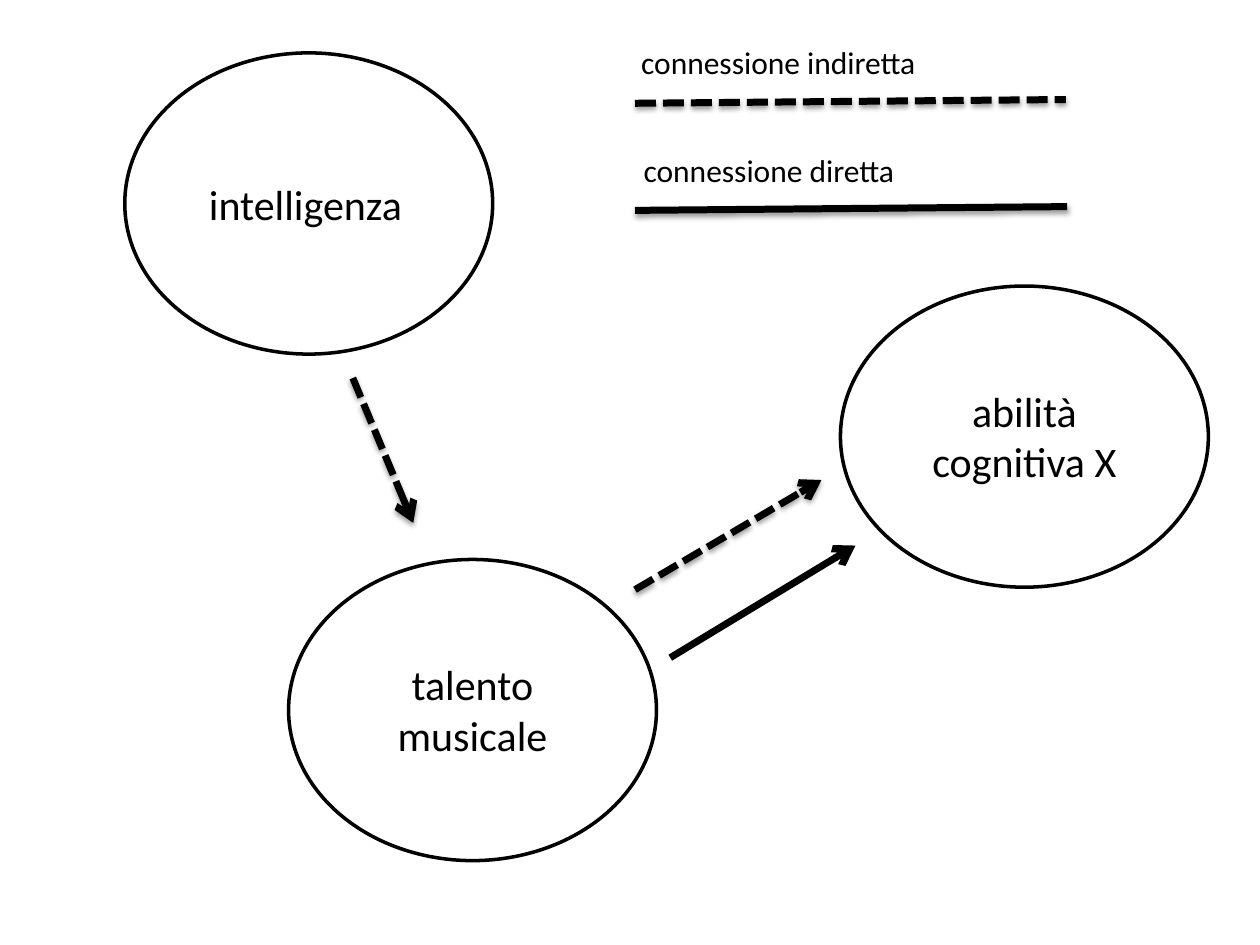
from dataclasses import dataclass
from lxml.etree import SubElement
from pptx import Presentation
from pptx.dml.color import RGBColor
from pptx.enum.dml import MSO_LINE
from pptx.enum.shapes import MSO_CONNECTOR, MSO_SHAPE
from pptx.enum.text import MSO_AUTO_SIZE, PP_ALIGN
from pptx.oxml.ns import qn
from pptx.util import Inches, Pt


@dataclass(frozen=True)
class Theme:
    font: str = "Calibri"
    ink: RGBColor = RGBColor(0, 0, 0)
    paper: RGBColor = RGBColor(255, 255, 255)
    node_size: int = 24
    legend_size: int = 18
    outline: int = 2
    stroke: int = 4


THEME = Theme()
NODE_W, NODE_H = 2.92, 2.39
NODE_TEXT_W = 1.78

NODES = [
    ("intelligenza", 0.99, 0.42, 0.5, PP_ALIGN.LEFT),
    ("talento musicale", 2.29, 4.44, 0.91, PP_ALIGN.CENTER),
    ("abilità cognitiva X", 6.67, 2.27, 0.91, PP_ALIGN.CENTER),
]
LINES = [
    {"ends": (5.32, 5.22, 6.79, 4.33), "arrow": True},
    {"ends": (2.8, 3, 3.28, 4.15), "arrow": True, "dashed": True, "shadow": True},
    {"ends": (5.04, 4.68, 6.52, 3.81), "arrow": True, "dashed": True, "shadow": True},
    {"ends": (5.04, 0.82, 8.46, 0.79), "dashed": True, "shadow": True},
    {"ends": (5.04, 1.67, 8.47, 1.64), "shadow": True},
]
LEGEND = [
    ("connessione indiretta", 4.99, 0.29),
    ("connessione diretta", 5.01, 1.15),
]


def add_text(shapes, text, box, size, align=PP_ALIGN.LEFT):
    tf = shapes.add_textbox(*map(Inches, box)).text_frame
    tf.word_wrap = True
    tf.auto_size = MSO_AUTO_SIZE.SHAPE_TO_FIT_TEXT
    tf.text = text
    p = tf.paragraphs[0]
    p.alignment = align
    font = p.runs[0].font
    font.name, font.size = THEME.font, Pt(size)
    font.color.rgb = THEME.ink


def add_node(slide, text, x, y, text_h, align):
    shapes = slide.shapes.add_group_shape().shapes
    sp = shapes.add_shape(MSO_SHAPE.OVAL, *map(Inches, (x, y, NODE_W, NODE_H)))
    sp.shadow.inherit = False
    sp.fill.solid()
    sp.fill.fore_color.rgb = THEME.paper
    sp.line.color.rgb = THEME.ink
    sp.line.width = Pt(THEME.outline)
    box = (x + (NODE_W - NODE_TEXT_W) / 2, y + (NODE_H - text_h) / 2, NODE_TEXT_W, text_h)
    add_text(shapes, text, box, THEME.node_size, align)


def add_line(slide, ends, arrow=False, dashed=False, shadow=False):
    line = slide.shapes.add_connector(MSO_CONNECTOR.STRAIGHT, *map(Inches, ends))
    line.line.color.rgb = THEME.ink
    line.line.width = Pt(THEME.stroke)
    if dashed:
        line.line.dash_style = MSO_LINE.SQUARE_DOT
    sp_pr = line._element.spPr
    if arrow:
        SubElement(sp_pr.find(qn("a:ln")), qn("a:tailEnd"), type="arrow")
    effects = SubElement(sp_pr, qn("a:effectLst"))
    if shadow:
        outer = SubElement(effects, qn("a:outerShdw"), blurRad=str(Pt(3.1)),
                           dist=str(Pt(1.6)), dir="5400000", rotWithShape="0")
        color = SubElement(outer, qn("a:srgbClr"), val=str(THEME.ink))
        SubElement(color, qn("a:alpha"), val="38000")


def main():
    prs = Presentation()
    prs.slide_width, prs.slide_height = Inches(10), Inches(7.5)
    slide = prs.slides.add_slide(prs.slide_layouts[6])
    for node in NODES:
        add_node(slide, *node)
    for line in LINES:
        add_line(slide, **line)
    for text, x, y in LEGEND:
        add_text(slide.shapes, text, (x, y, 2.44, 0.4), THEME.legend_size)
    prs.save("out.pptx")


if __name__ == "__main__":
    main()
